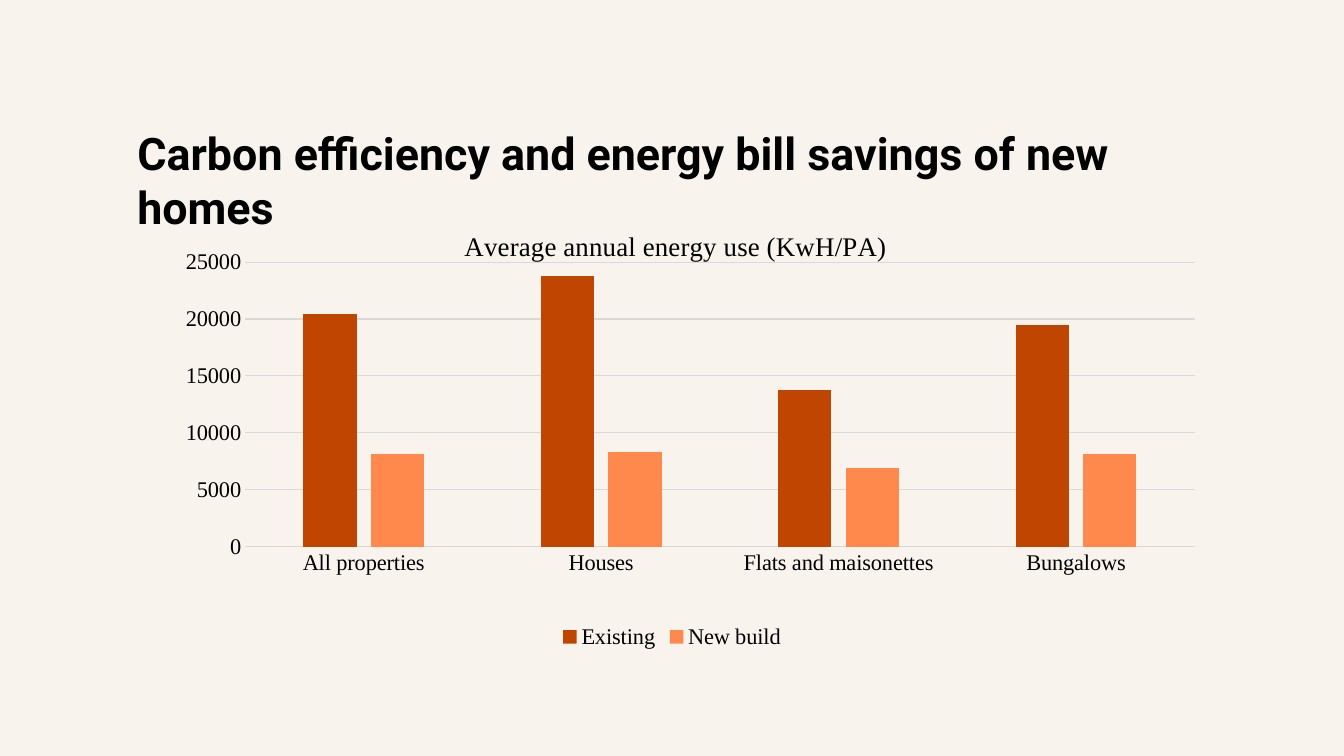
from dataclasses import dataclass

from lxml import etree
from pptx import Presentation
from pptx.chart.data import CategoryChartData
from pptx.dml.color import RGBColor
from pptx.enum import chart as ch, text
from pptx.oxml.ns import qn
from pptx.util import Pt

HEADLINE = "Carbon efficiency and energy bill savings of new homes"
CHART_TITLE = "Average annual energy use (KwH/PA)"
HOMES = ["All properties", "Houses", "Flats and maisonettes", "Bungalows"]
ENERGY_USE = {
    "Existing": [20400, 23800, 13800, 19500],
    "New build": [8100, 8300, 6900, 8100],
}


@dataclass(frozen=True)
class Theme:
    background: RGBColor = RGBColor.from_string("F9F3ED")
    ink: RGBColor = RGBColor.from_string("000000")
    rule: RGBColor = RGBColor.from_string("D9D9D9")
    bars: tuple = (RGBColor.from_string("C04500"), RGBColor.from_string("FF884D"))
    headline_font: str = "Roboto"
    chart_font: str = "Times New Roman"
    headline_size: float = 32
    chart_title_size: float = 19.2
    label_size: float = 16


THEME = Theme()
SLIDE_W, SLIDE_H = 960, 540
MARGIN = 91
CONTENT_W = SLIDE_W - 2 * MARGIN
HEADLINE_TOP, HEADLINE_H = 82.8, 42.5
CHART_TOP, CHART_H = 145.4, 321.8


def style(font, name, size, bold=False):
    font.name, font.size, font.bold = name, Pt(size), bold
    font.color.rgb = THEME.ink


def rule(line):
    line.color.rgb = THEME.rule
    line.width = Pt(0.75)


def place(parent, index, **settings):
    """Give a chart part a manual layout, as fractions of the chart."""
    for old in parent.findall(qn("c:layout")):
        parent.remove(old)
    layout = etree.Element(qn("c:layout"))
    manual = etree.SubElement(layout, qn("c:manualLayout"))
    for tag, value in settings.items():
        etree.SubElement(manual, qn(f"c:{tag}")).set("val", str(value))
    parent.insert(index, layout)


def add_headline(slide):
    box = slide.shapes.add_textbox(
        Pt(MARGIN), Pt(HEADLINE_TOP), Pt(CONTENT_W), Pt(HEADLINE_H))
    frame = box.text_frame
    frame.word_wrap = True
    frame.vertical_anchor = text.MSO_ANCHOR.TOP
    frame.margin_left = frame.margin_right = frame.margin_top = Pt(7.2)
    headline = frame.paragraphs[0]
    headline.text = HEADLINE
    style(headline.font, THEME.headline_font, THEME.headline_size, bold=True)


def add_energy_chart(slide):
    data = CategoryChartData()
    data.categories = HOMES
    for name, values in ENERGY_USE.items():
        data.add_series(name, values)
    chart = slide.shapes.add_chart(
        ch.XL_CHART_TYPE.COLUMN_CLUSTERED, Pt(MARGIN), Pt(CHART_TOP),
        Pt(CONTENT_W), Pt(CHART_H), data).chart
    style(chart.font, THEME.chart_font, THEME.label_size)

    title = chart.chart_title.text_frame.paragraphs[0]
    title.text = CHART_TITLE
    style(title.font, THEME.chart_font, THEME.chart_title_size)
    place(chart.chart_title._element, 1, xMode="edge", yMode="edge", x=0.305, y=0.047)

    columns = chart.plots[0]
    columns.gap_width, columns.overlap = 219, -27
    columns.vary_by_categories = False
    for series, color in zip(columns.series, THEME.bars):
        series.format.fill.solid()
        series.format.fill.fore_color.rgb = color
    place(chart._chartSpace.chart.plotArea, 0, layoutTarget="inner",
          xMode="edge", yMode="edge", x=0.108, y=0.13, w=0.872, h=0.632)

    homes, energy = chart.category_axis, chart.value_axis
    for axis in (homes, energy):
        axis.major_tick_mark = axis.minor_tick_mark = ch.XL_TICK_MARK.NONE
        style(axis.tick_labels.font, THEME.chart_font, THEME.label_size)
    rule(homes.format.line)
    energy.format.line.fill.background()
    energy.minimum_scale, energy.maximum_scale, energy.major_unit = 0, 25000, 5000
    rule(energy.major_gridlines.format.line)

    chart.has_legend = True
    chart.legend.position = ch.XL_LEGEND_POSITION.BOTTOM
    chart.legend.include_in_layout = False
    style(chart.legend.font, THEME.chart_font, THEME.label_size)


def main():
    deck = Presentation()
    deck.slide_width, deck.slide_height = Pt(SLIDE_W), Pt(SLIDE_H)
    slide = deck.slides.add_slide(deck.slide_layouts[6])
    slide.background.fill.solid()
    slide.background.fill.fore_color.rgb = THEME.background
    add_headline(slide)
    add_energy_chart(slide)
    deck.save("out.pptx")


if __name__ == "__main__":
    main()
